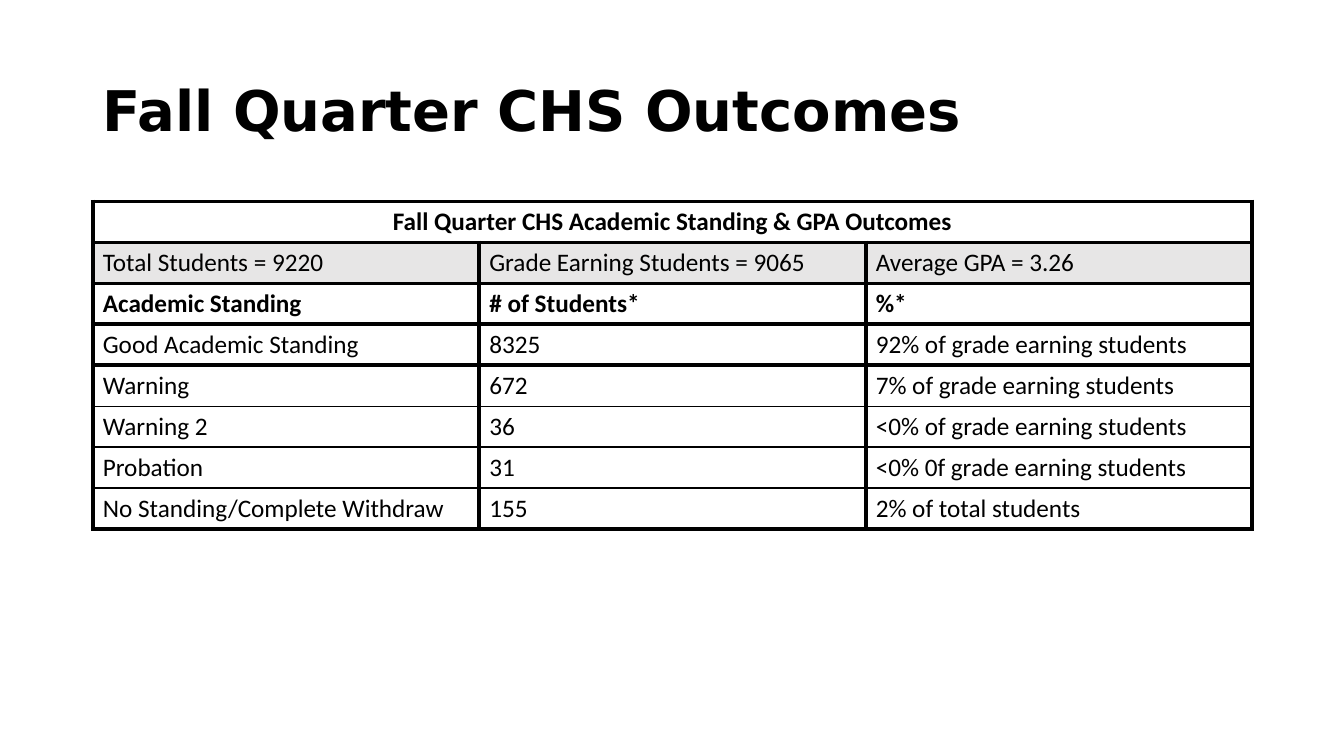
"""Build the slide with the fall quarter academic standing table."""
from lxml.etree import SubElement
from pptx import Presentation
from pptx.dml.color import RGBColor
from pptx.enum.text import MSO_ANCHOR, PP_ALIGN
from pptx.oxml.ns import qn
from pptx.util import Inches, Pt

BLACK = RGBColor(0x00, 0x00, 0x00)
GREY = RGBColor(0xE7, 0xE6, 0xE6)
THICK, THIN = Pt(3), Pt(1)
LEFT, WIDTH = Inches(0.92), Inches(11.5)
ROW_HEIGHT = Inches(0.406)

ROWS = [
    ("Fall Quarter CHS Academic Standing & GPA Outcomes", "", ""),
    ("Total Students = 9220", "Grade Earning Students = 9065", "Average GPA = 3.26"),
    ("Academic Standing", "# of Students*", "%*"),
    ("Good Academic Standing", "8325", "92% of grade earning students"),
    ("Warning", "672", "7% of grade earning students"),
    ("Warning 2", "36", "<0% of grade earning students"),
    ("Probation", "31", "<0% 0f grade earning students"),
    ("No Standing/Complete Withdraw", "155", "2% of total students"),
]
BANNER, TOTALS, HEADINGS = 0, 1, 2
THICK_EDGES = {0, 1, 2, 3, 4, len(ROWS)}


def write(frame, text, size=18, font="Calibri", bold=False, align=PP_ALIGN.LEFT, spacing=1.0):
    para = frame.paragraphs[0]
    para.alignment = align
    para.line_spacing = spacing
    span = para.add_run()
    span.text = text
    span.font.size = Pt(size)
    span.font.name = font
    span.font.bold = bold
    span.font.color.rgb = BLACK


def add_border(cell, side, width):
    line = SubElement(cell._tc.get_or_add_tcPr(), qn(f"a:ln{side}"), w=str(width))
    fill = SubElement(line, qn("a:solidFill"))
    SubElement(fill, qn("a:srgbClr"), val=str(BLACK))


deck = Presentation()
deck.slide_width, deck.slide_height = Inches(13.33), Inches(7.5)
page = deck.slides.add_slide(deck.slide_layouts[6])

title = page.shapes.add_textbox(LEFT, Inches(0.4), WIDTH, Inches(1.45)).text_frame
title.word_wrap = True
title.vertical_anchor = MSO_ANCHOR.MIDDLE
write(title, "Fall Quarter CHS Outcomes", size=40, font="DejaVu Sans", bold=True, spacing=0.9)

table = page.shapes.add_table(
    len(ROWS), len(ROWS[0]), LEFT, Inches(2), WIDTH, ROW_HEIGHT * len(ROWS)
).table
table.first_row = table.horz_banding = False

for row, texts in enumerate(ROWS):
    table.rows[row].height = ROW_HEIGHT
    for column, text in enumerate(texts):
        cell = table.cell(row, column)
        if text:
            write(
                cell.text_frame,
                text,
                bold=row in (BANNER, HEADINGS),
                align=PP_ALIGN.CENTER if row == BANNER else PP_ALIGN.LEFT,
            )
        add_border(cell, "L", THICK)
        add_border(cell, "R", THICK)
        add_border(cell, "T", THICK if row in THICK_EDGES else THIN)
        add_border(cell, "B", THICK if row + 1 in THICK_EDGES else THIN)
        if row == TOTALS:
            cell.fill.solid()
            cell.fill.fore_color.rgb = GREY
        else:
            cell.fill.background()

table.cell(BANNER, 0).merge(table.cell(BANNER, len(ROWS[0]) - 1))

deck.save("out.pptx")
